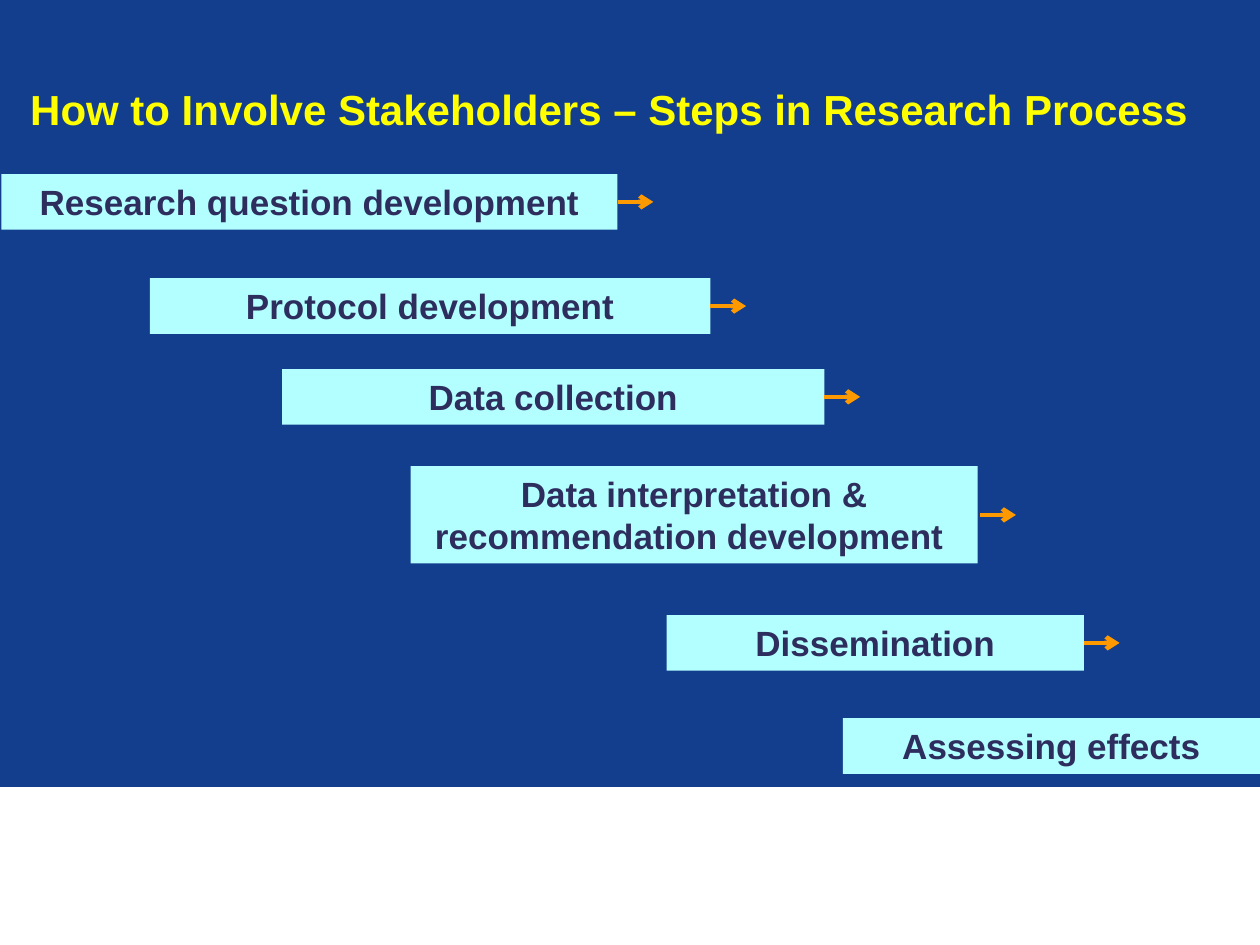
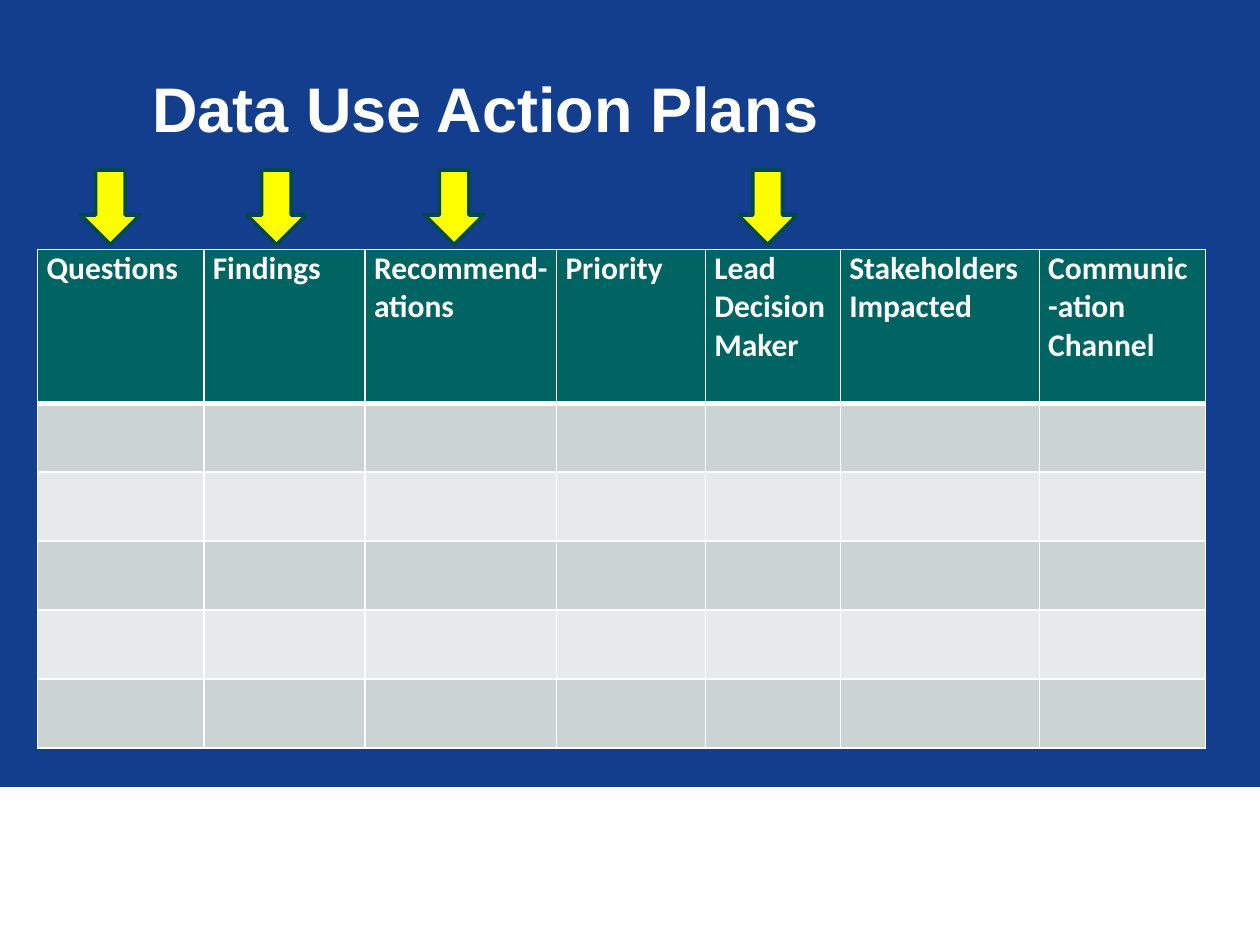
from dataclasses import dataclass

from lxml.etree import SubElement
from pptx import Presentation
from pptx.dml.color import RGBColor
from pptx.enum.shapes import MSO_CONNECTOR, MSO_SHAPE
from pptx.enum.text import MSO_ANCHOR, PP_ALIGN
from pptx.oxml.ns import qn
from pptx.shapes.autoshape import Shape
from pptx.slide import Slide
from pptx.table import _Cell
from pptx.text.text import _Paragraph
from pptx.util import Cm, Pt

NAVY = RGBColor(0x13, 0x3D, 0x8D)
WHITE = RGBColor(0xFF, 0xFF, 0xFF)
YELLOW = RGBColor(0xFF, 0xFF, 0x00)
ORANGE = RGBColor(0xFF, 0x99, 0x00)
ICE = RGBColor(0xB3, 0xFF, 0xFF)
INDIGO = RGBColor(0x2D, 0x2E, 0x5E)
TEAL = RGBColor(0x00, 0x64, 0x62)
DARK_TEAL = RGBColor(0x00, 0x4A, 0x49)
GREY = RGBColor(0xCC, 0xD3, 0xD3)
PALE_GREY = RGBColor(0xE7, 0xEA, 0xEA)

SLIDE_WIDTH, SLIDE_HEIGHT = 25.4, 19.05
BAND_TOP = 15.88
STEP_ARROW_LENGTH = 0.72


@dataclass(frozen=True)
class Box:
    """A place on the slide, in centimetres."""
    left: float
    top: float
    width: float
    height: float

    def lengths(self) -> tuple[Cm, Cm, Cm, Cm]:
        return Cm(self.left), Cm(self.top), Cm(self.width), Cm(self.height)


@dataclass(frozen=True)
class Step:
    label: str
    box: Box
    arrow_gap: float = 0


@dataclass(frozen=True)
class Column:
    heading: str
    width: float


STEPS = [
    Step("Research question development", Box(0.03, 3.51, 12.42, 1.12)),
    Step("Protocol development", Box(3.02, 5.61, 11.3, 1.12)),
    Step("Data collection", Box(5.69, 7.44, 10.93, 1.12)),
    Step("Data interpretation & recommendation development ",
         Box(8.28, 9.4, 11.43, 1.96), arrow_gap=0.05),
    Step("Dissemination", Box(13.44, 12.4, 8.41, 1.12)),
    Step("Assessing effects", Box(16.99, 14.48, 8.41, 1.12)),
]

COLUMNS = [
    Column("Questions", 3.35),
    Column("Findings", 3.25),
    Column("Recommend-ations", 3.86),
    Column("Priority", 3.0),
    Column("Lead Decision Maker", 2.72),
    Column("Stakeholders Impacted", 4.01),
    Column("Communic-ation Channel", 3.35),
]
HEADER_HEIGHT, ROW_HEIGHT, PLAN_ROWS = 3.1, 1.39, 5
MARKER_LEFTS = [1.63, 4.98, 8.56, 14.88]


def style_text(paragraph: _Paragraph, size: float, color: RGBColor,
               name: str = "Arial") -> None:
    font = paragraph.font
    font.name, font.size, font.bold = name, Pt(size), True
    font.color.rgb = color


def add_block(slide: Slide, kind: MSO_SHAPE, box: Box, fill: RGBColor,
              outline: RGBColor | None = None, outline_width: float = 0.75) -> Shape:
    block = slide.shapes.add_shape(kind, *box.lengths())
    block.shadow.inherit = False
    block.fill.solid()
    block.fill.fore_color.rgb = fill
    if outline is None:
        block.line.fill.background()
    else:
        block.line.color.rgb = outline
        block.line.width = Pt(outline_width)
    return block


def add_base_slide(deck: Presentation, title: str, title_box: Box,
                   title_size: float, title_color: RGBColor) -> Slide:
    """Add a navy slide with the white bottom band and a title."""
    slide = deck.slides.add_slide(deck.slide_layouts[6])
    slide.background.fill.solid()
    slide.background.fill.fore_color.rgb = NAVY
    band = Box(0, BAND_TOP, SLIDE_WIDTH, SLIDE_HEIGHT - BAND_TOP)
    add_block(slide, MSO_SHAPE.RECTANGLE, band, WHITE, WHITE)

    frame = slide.shapes.add_textbox(*title_box.lengths()).text_frame
    frame.word_wrap = True
    frame.vertical_anchor = MSO_ANCHOR.MIDDLE
    frame.text = title
    style_text(frame.paragraphs[0], title_size, title_color)
    return slide


def add_step_arrow(slide: Slide, left: float, middle: float) -> None:
    arrow = slide.shapes.add_connector(
        MSO_CONNECTOR.STRAIGHT, Cm(left), Cm(middle),
        Cm(left + STEP_ARROW_LENGTH), Cm(middle))
    arrow.line.color.rgb = ORANGE
    arrow.line.width = Pt(2.5)
    properties = arrow._element.spPr
    SubElement(properties.find(qn("a:ln")), qn("a:tailEnd"), type="arrow")
    SubElement(properties, qn("a:effectLst"))


def add_step(slide: Slide, step: Step) -> None:
    box = step.box
    frame = add_block(slide, MSO_SHAPE.RECTANGLE, box, ICE).text_frame
    frame.word_wrap = True
    frame.vertical_anchor = MSO_ANCHOR.TOP
    frame.text = step.label
    frame.paragraphs[0].alignment = PP_ALIGN.CENTER
    style_text(frame.paragraphs[0], 20, INDIGO)
    if step is not STEPS[-1]:
        add_step_arrow(slide, box.left + box.width + step.arrow_gap,
                       box.top + box.height / 2)


def style_cell(cell: _Cell, fill: RGBColor, top: float = 1, bottom: float = 1) -> None:
    """Fill a cell and give it white borders, widths in points."""
    properties = cell._tc.get_or_add_tcPr()
    for side, width in (("L", 1), ("R", 1), ("T", top), ("B", bottom)):
        border = SubElement(properties, qn(f"a:ln{side}"), w=str(Pt(width)))
        paint = SubElement(border, qn("a:solidFill"))
        SubElement(paint, qn("a:srgbClr"), val=str(WHITE))
    cell.fill.solid()
    cell.fill.fore_color.rgb = fill


def add_action_plan(slide: Slide) -> None:
    box = Box(0.76, 5.03, sum(column.width for column in COLUMNS),
              HEADER_HEIGHT + PLAN_ROWS * ROW_HEIGHT)
    plan = slide.shapes.add_table(PLAN_ROWS + 1, len(COLUMNS), *box.lengths()).table
    for row_index, row in enumerate(plan.rows):
        row.height = Cm(ROW_HEIGHT if row_index else HEADER_HEIGHT)
    for column_index, column in enumerate(COLUMNS):
        plan.columns[column_index].width = Cm(column.width)
        header = plan.cell(0, column_index)
        style_cell(header, TEAL, bottom=3)
        header.margin_left = header.margin_right = Cm(0.18)
        header.margin_top = header.margin_bottom = Cm(0)
        header.text = column.heading
        style_text(header.text_frame.paragraphs[0], 18, WHITE, "Calibri")
        for row_index in range(1, PLAN_ROWS + 1):
            style_cell(plan.cell(row_index, column_index),
                       GREY if row_index % 2 else PALE_GREY,
                       top=3 if row_index == 1 else 1)


def build_steps_slide(deck: Presentation) -> None:
    slide = add_base_slide(
        deck, "How to Involve Stakeholders – Steps in Research Process",
        Box(0.36, 1.55, 24.08, 1.27), 24, YELLOW)
    for step in STEPS:
        add_step(slide, step)


def build_plans_slide(deck: Presentation) -> None:
    slide = add_base_slide(deck, "Data Use Action Plans",
                           Box(2.82, 0.58, 21.56, 3.18), 36, WHITE)
    add_action_plan(slide)
    for left in MARKER_LEFTS:
        add_block(slide, MSO_SHAPE.DOWN_ARROW, Box(left, 3.43, 1.19, 1.5),
                  YELLOW, DARK_TEAL, 2)


def main() -> None:
    deck = Presentation()
    deck.slide_width, deck.slide_height = Cm(SLIDE_WIDTH), Cm(SLIDE_HEIGHT)
    build_steps_slide(deck)
    build_plans_slide(deck)
    deck.save("out.pptx")


if __name__ == "__main__":
    main()
